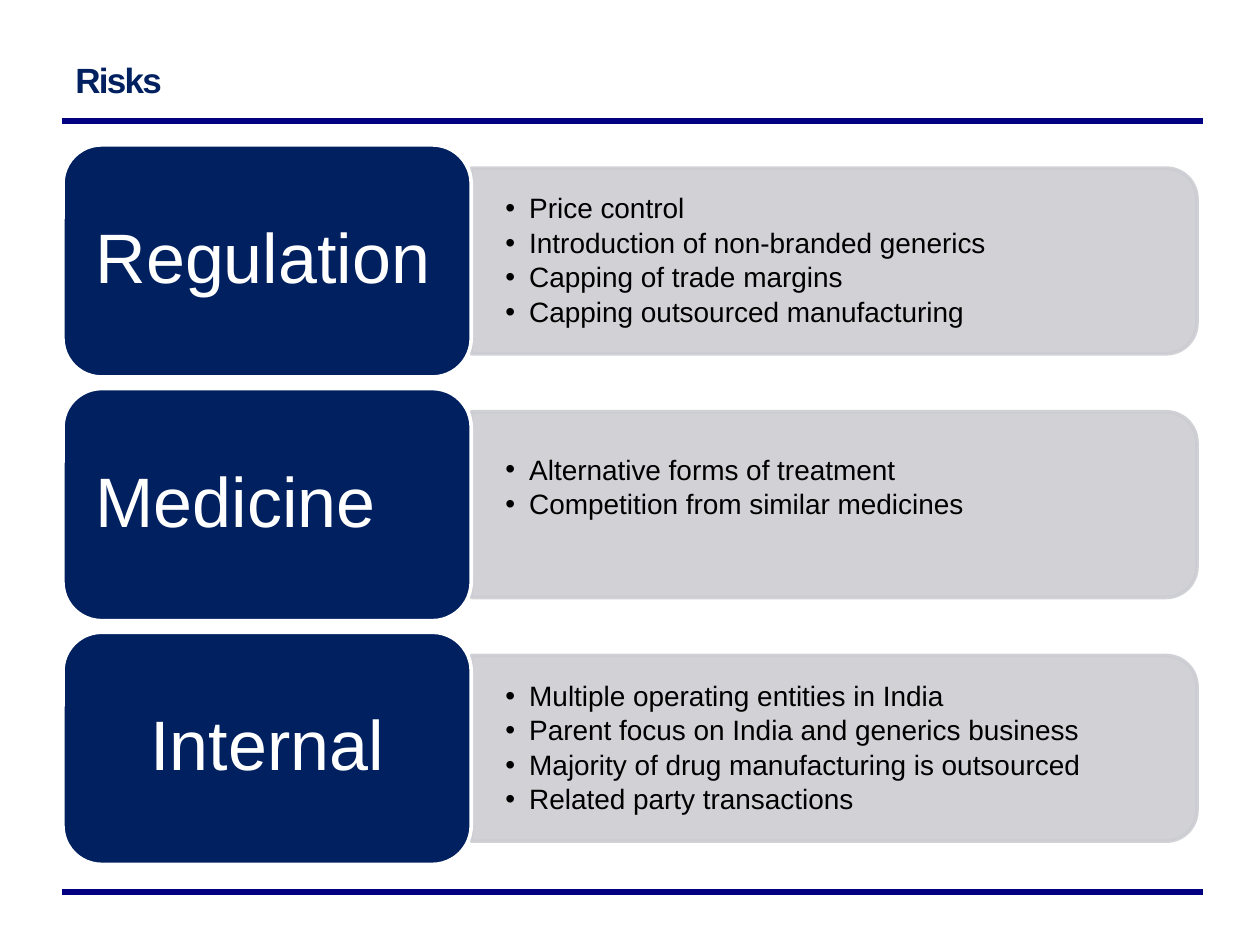
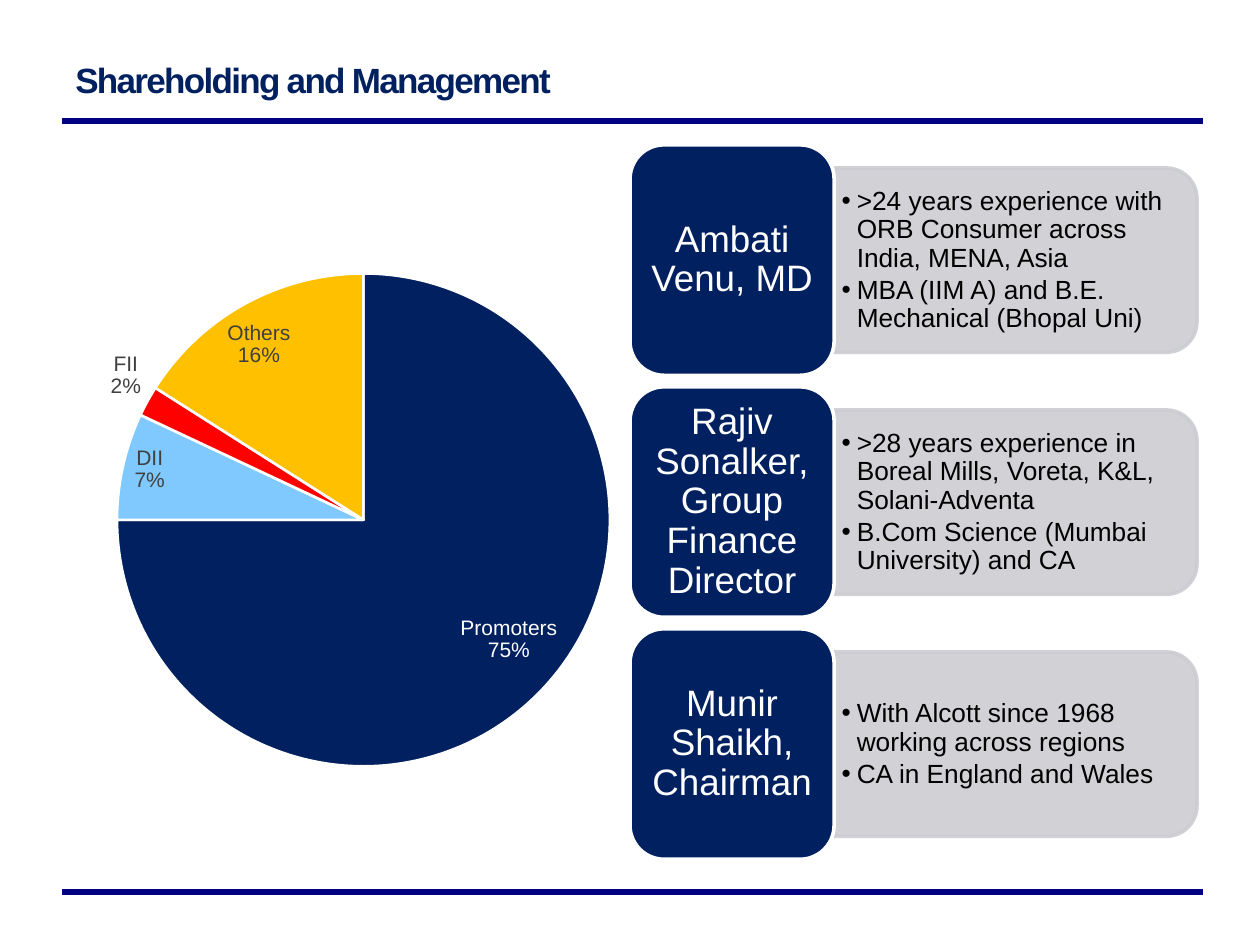
"""Builds two slides on risks, shareholding and management."""
from lxml import etree
from pptx import Presentation, util as u
from pptx.chart.data import CategoryChartData
from pptx.dml.color import RGBColor
from pptx.enum import chart as charts, shapes, text
from pptx.oxml import parse_xml
from pptx.oxml.ns import nsdecls, qn

NAVY, RULE, GREY, WHITE, BLACK = "002060", "000080", "CCCDD2", "FFFFFF", "000000"
FONT = "Arial"
MARGIN, TOP = 0.5, 1.15
LEFT, CENTER = text.PP_ALIGN.LEFT, text.PP_ALIGN.CENTER


def color(value):
    return RGBColor.from_string(value)


def write(box, lines, size, hue, align=LEFT, spacing=0.9, insets=(0.1, 0.05), indent=0, extra=0):
    frame = box.text_frame
    frame.word_wrap = True
    frame.vertical_anchor = text.MSO_ANCHOR.MIDDLE
    frame.margin_left = frame.margin_right = u.Inches(insets[0])
    frame.margin_top = u.Inches(insets[1])
    frame.margin_bottom = u.Inches(insets[1] + extra)
    for number, line in enumerate(lines):
        para = frame.add_paragraph() if number else frame.paragraphs[0]
        para.alignment = align
        para.line_spacing = spacing
        span = para.add_run()
        span.text = line
        span.font.name, span.font.size = FONT, u.Pt(size)
        span.font.color.rgb = color(hue)
        if indent:
            para.space_after = u.Pt(0.15 * size)
            props = para._p.get_or_add_pPr()
            props.set("marL", str(u.Inches(indent)))
            props.set("indent", str(-u.Inches(indent)))
            etree.SubElement(props, qn("a:buFont")).set("typeface", FONT)
            etree.SubElement(props, qn("a:buChar")).set("char", "•")
    return frame.paragraphs[0]


pages = [
    dict(
        title="Risks", left=MARGIN, width=9, height=5.71,
        head_size=40, head_insets=(0.17, 0.08),
        body_size=16, body_insets=(0.27, 0.14), indent=0.19,
        rows=[
            ("Regulation", LEFT, 0, ["Price control", "Introduction of non-branded generics",
                                     "Capping of trade margins", "Capping outsourced manufacturing"]),
            ("Medicine", LEFT, 0.27, ["Alternative forms of treatment",
                                      "Competition from similar medicines"]),
            ("Internal", CENTER, 0, ["Multiple operating entities in India",
                                     "Parent focus on India and generics business",
                                     "Majority of drug manufacturing is outsourced",
                                     "Related party transactions"]),
        ],
    ),
    dict(
        title="Shareholding and Management", left=5, width=4.5, height=5.67,
        head_size=21, head_insets=(0.09, 0.04),
        body_size=15, body_insets=(0.06, 0.03), indent=0.12,
        rows=[
            ("Ambati Venu, MD", CENTER, 0,
             [">24 years experience with ORB Consumer across India, MENA, Asia",
              "MBA (IIM A) and B.E. Mechanical (Bhopal Uni)"]),
            ("Rajiv Sonalker, Group Finance Director", CENTER, 0,
             [">28 years experience in Boreal Mills, Voreta, K&L, Solani-Adventa",
              "B.Com Science (Mumbai University) and CA"]),
            ("Munir Shaikh, Chairman", CENTER, 0,
             ["With Alcott since 1968 working across regions", "CA in England and Wales"]),
        ],
    ),
]

deck = Presentation()
deck.slide_width, deck.slide_height = u.Inches(10), u.Inches(7.5)

for content in pages:
    page = deck.slides.add_slide(deck.slide_layouts[6])
    for y in (0.96, 7.08):
        rule = page.shapes.add_connector(
            shapes.MSO_CONNECTOR.STRAIGHT, u.Inches(0.49), u.Inches(y), u.Inches(9.55), u.Inches(y))
        rule.line.color.rgb, rule.line.width = color(RULE), u.Pt(3)
        etree.SubElement(rule._element.spPr, qn("a:effectLst"))

    title = page.shapes.add_textbox(u.Inches(MARGIN), u.Inches(0.13), u.Inches(9), u.Inches(0.83))
    para = write(title, [content["title"]], 20, NAVY, spacing=1.5)
    para.space_before = para.space_after = u.Pt(10)
    para.runs[0].font.bold = True
    para.runs[0]._r.get_or_add_rPr().set("spc", "-100")

    card_height = content["height"] / 3.1
    card_width = content["width"] * 0.36
    band_height = card_height * 0.8
    band_width = content["width"] - card_width
    band_left = content["left"] + card_width
    for row, (heading, align, extra, bullets) in enumerate(content["rows"]):
        top = TOP + row * card_height * 1.05
        middle = top + card_height / 2
        band = page.shapes.add_shape(
            shapes.MSO_SHAPE.ROUND_2_SAME_RECTANGLE,
            u.Inches(band_left + (band_width - band_height) / 2), u.Inches(middle - band_width / 2),
            u.Inches(band_height), u.Inches(band_width))
        band.rotation = 90
        card = page.shapes.add_shape(
            shapes.MSO_SHAPE.ROUNDED_RECTANGLE, u.Inches(content["left"]), u.Inches(top),
            u.Inches(card_width), u.Inches(card_height))
        for shape, fill, outline in ((band, GREY, GREY), (card, NAVY, WHITE)):
            shape.shadow.inherit = False
            shape.fill.solid()
            shape.fill.fore_color.rgb = color(fill)
            shape.line.color.rgb, shape.line.width = color(outline), u.Pt(2.08)
        for tint in band._element.spPr.iter(qn("a:srgbClr")):
            etree.SubElement(tint, qn("a:alpha")).set("val", "90000")
        write(card, [heading], content["head_size"], WHITE, align, insets=content["head_insets"])
        details = page.shapes.add_textbox(
            u.Inches(band_left), u.Inches(middle - 0.66), u.Inches(band_width - 0.07), u.Inches(1.33))
        write(details, bullets, content["body_size"], BLACK, insets=content["body_insets"],
              indent=content["indent"], extra=extra)

holders = [
    ("Promoters", 75, NAVY, WHITE),
    ("DII", 7, "7FC9FF", "404040"),
    ("FII", 2, "FF0000", "404040"),
    ("Others", 16, "FFC000", "404040"),
]
data = CategoryChartData()
data.categories = [holder[0] for holder in holders]
data.add_series("Series 1", [holder[1] for holder in holders])
pie = page.shapes.add_chart(charts.XL_CHART_TYPE.PIE, u.Inches(MARGIN), u.Inches(TOP),
                            u.Inches(4.5), u.Inches(5.67), data).chart
pie.has_legend = pie.has_title = False
pie.font.name, pie.font.size = FONT, u.Pt(10)
pie.font.color.rgb = color(BLACK)
pie.plots[0].vary_by_categories = True
for index, (name, share, fill, ink) in enumerate(holders):
    point = pie.plots[0].series[0].points[index]
    point.format.fill.solid()
    point.format.fill.fore_color.rgb = color(fill)
    point.format.line.color.rgb, point.format.line.width = color(WHITE), u.Pt(1.5)
    label = point.data_label
    label.font.name, label.font.size = FONT, u.Pt(12)
    label.font.color.rgb = color(ink)
    label.position = charts.XL_LABEL_POSITION.BEST_FIT

space = pie._chartSpace
for tag, flag in (("showVal", "0"), ("showCatName", "1"), ("showPercent", "1"),
                  ("showLeaderLines", "0")):
    for switch in space.iter(qn("c:" + tag)):
        switch.set("val", flag)
for label in space.iter(qn("c:dLbl")):
    etree.SubElement(label, qn("c:separator")).text = "\n"

plot_area = space.find(".//" + qn("c:plotArea"))
for layout in plot_area.findall(qn("c:layout")):
    plot_area.remove(layout)
frame = {"x": 0.09, "y": 0.18, "w": 0.88, "h": 0.69}
modes = '<c:layoutTarget val="inner"/><c:xMode val="edge"/><c:yMode val="edge"/>'
sizes = "".join(f'<c:{key} val="{value}"/>' for key, value in frame.items())
plot_area.insert(0, parse_xml(
    f'<c:layout {nsdecls("c")}><c:manualLayout>{modes}{sizes}</c:manualLayout></c:layout>'))

deck.save("out.pptx")
